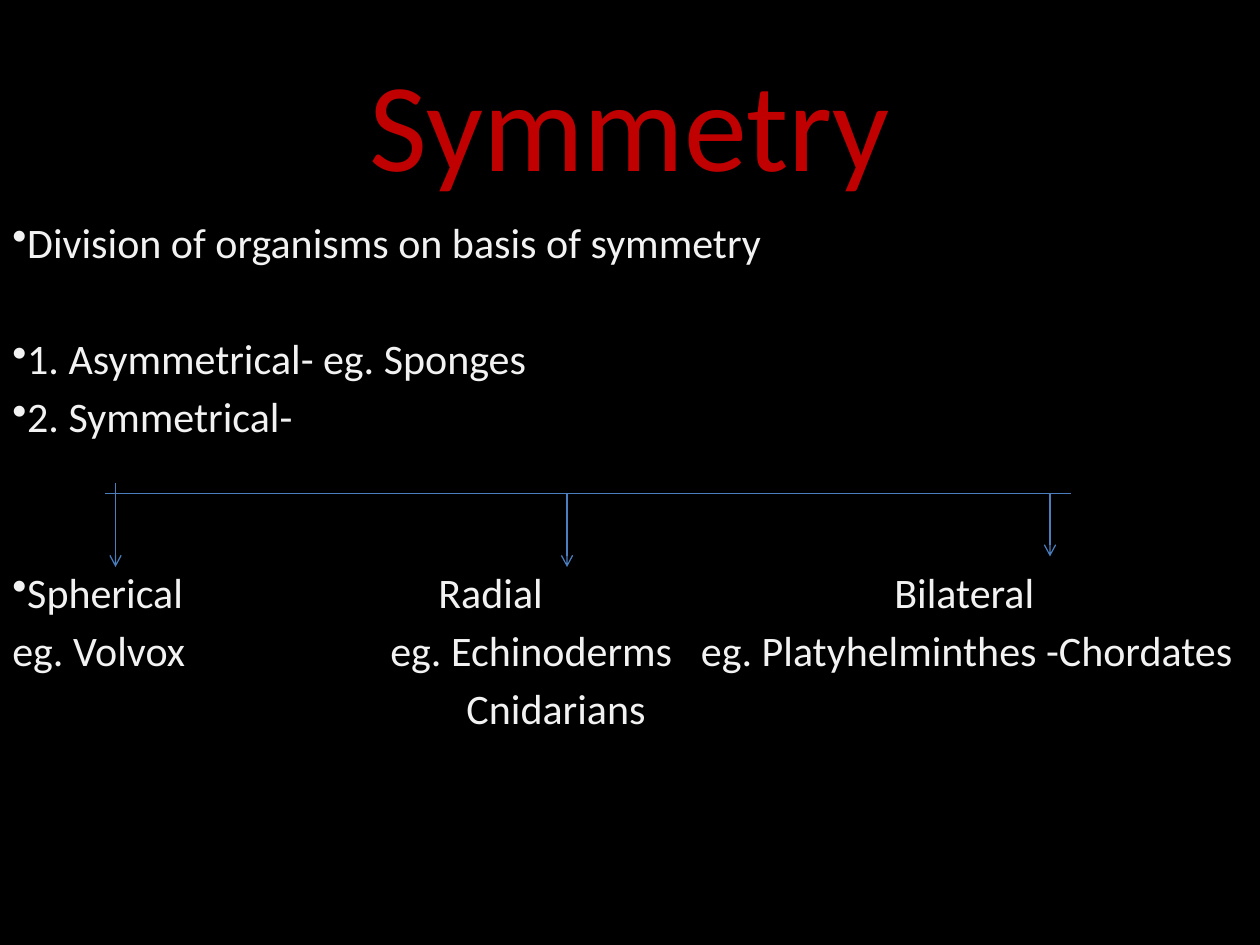
from pptx import Presentation
from pptx.dml.color import RGBColor
from pptx.enum.shapes import MSO_CONNECTOR
from pptx.enum.text import MSO_ANCHOR, PP_ALIGN
from pptx.oxml.ns import qn
from pptx.util import Pt
from lxml import etree

STRAIGHT = MSO_CONNECTOR.STRAIGHT
TOP, MIDDLE = MSO_ANCHOR.TOP, MSO_ANCHOR.MIDDLE
LEFT, CENTER = PP_ALIGN.LEFT, PP_ALIGN.CENTER

BLACK = RGBColor(0x00, 0x00, 0x00)
RED = RGBColor(0xC0, 0x00, 0x00)
OFF_WHITE = RGBColor(0xF2, 0xF2, 0xF2)
BLUE = RGBColor(0x4B, 0x7E, 0xBC)

LINE_GAP = 4.3       # space before an ordinary line
LINE_PITCH = 33.6    # one 24 pt line with its gap


class SlideBuilder:
    font_name = "Calibri"
    line_width = 0.75

    def __init__(self, slide):
        self.slide = slide

    def background(self, color):
        fill = self.slide.background.fill
        fill.solid()
        fill.fore_color.rgb = color

    def text_frame(self, left, top, width, height, anchor=TOP):
        box = self.slide.shapes.add_textbox(Pt(left), Pt(top), Pt(width), Pt(height))
        frame = box.text_frame
        frame.word_wrap = True
        frame.vertical_anchor = anchor
        return frame

    def paragraph(self, paragraph, text, size, color, align=LEFT,
                  bullet=False, tabs=(), before=0):
        properties = paragraph._p.get_or_add_pPr()
        if bullet:
            properties.set("marL", "0")
            properties.set("indent", "0")
            etree.SubElement(properties, qn("a:buChar")).set("char", "•")
        if tabs:
            tab_list = etree.SubElement(properties, qn("a:tabLst"))
            for position in tabs:
                tab = etree.SubElement(tab_list, qn("a:tab"))
                tab.set("pos", str(int(Pt(position))))
                tab.set("algn", "l")
        paragraph.alignment = align
        paragraph.space_before = Pt(before)
        run = paragraph.add_run()
        run.text = text
        run.font.name = self.font_name
        run.font.size = Pt(size)
        run.font.color.rgb = color

    def line(self, start, end, arrow=False):
        connector = self.slide.shapes.add_connector(
            STRAIGHT, *(Pt(value) for value in (*start, *end)))
        connector.line.color.rgb = BLUE
        connector.line.width = Pt(self.line_width)
        if arrow:
            line_xml = connector.line._get_or_add_ln()
            etree.SubElement(line_xml, qn("a:tailEnd")).set("type", "arrow")
        etree.SubElement(connector._element.spPr, qn("a:effectLst"))


def main():
    presentation = Presentation()
    presentation.slide_width, presentation.slide_height = Pt(720), Pt(540)
    slide = presentation.slides.add_slide(presentation.slide_layouts[6])
    builder = SlideBuilder(slide)
    builder.background(BLACK)

    # Title
    title = builder.text_frame(24, 18, 672, 102, MIDDLE)
    builder.paragraph(title.paragraphs[0], "Symmetry", 72, RED, CENTER)

    # Classification: text, bullet, tab stops, space before
    body_lines = [
        ("Division of organisms on basis of symmetry", True, (), 0),
        ("1. Asymmetrical- eg. Sponges", True, (), LINE_GAP + LINE_PITCH),
        ("2. Symmetrical-", True, (), LINE_GAP),
        ("Spherical\tRadial\tBilateral", True, (243.5, 504), LINE_GAP + 2 * LINE_PITCH),
        ("eg. Volvox\teg. Echinoderms\teg. Platyhelminthes -Chordates",
         False, (216, 393.5), LINE_GAP),
        ("\tCnidarians", False, (259.5,), LINE_GAP),
    ]
    body = builder.text_frame(0, 120, 720, 384)
    for index, (text, bullet, tabs, before) in enumerate(body_lines):
        paragraph = body.add_paragraph() if index else body.paragraphs[0]
        builder.paragraph(paragraph, text, 24, OFF_WHITE,
                          bullet=bullet, tabs=tabs, before=before)

    # Branches to the three kinds of symmetry
    bar_y = 282
    for x, top, bottom in ((66, 276, 324), (324, bar_y, 324), (600, bar_y, 318)):
        builder.line((x, top), (x, bottom), arrow=True)
    builder.line((612, bar_y), (60, bar_y))

    presentation.save("out.pptx")


if __name__ == "__main__":
    main()
